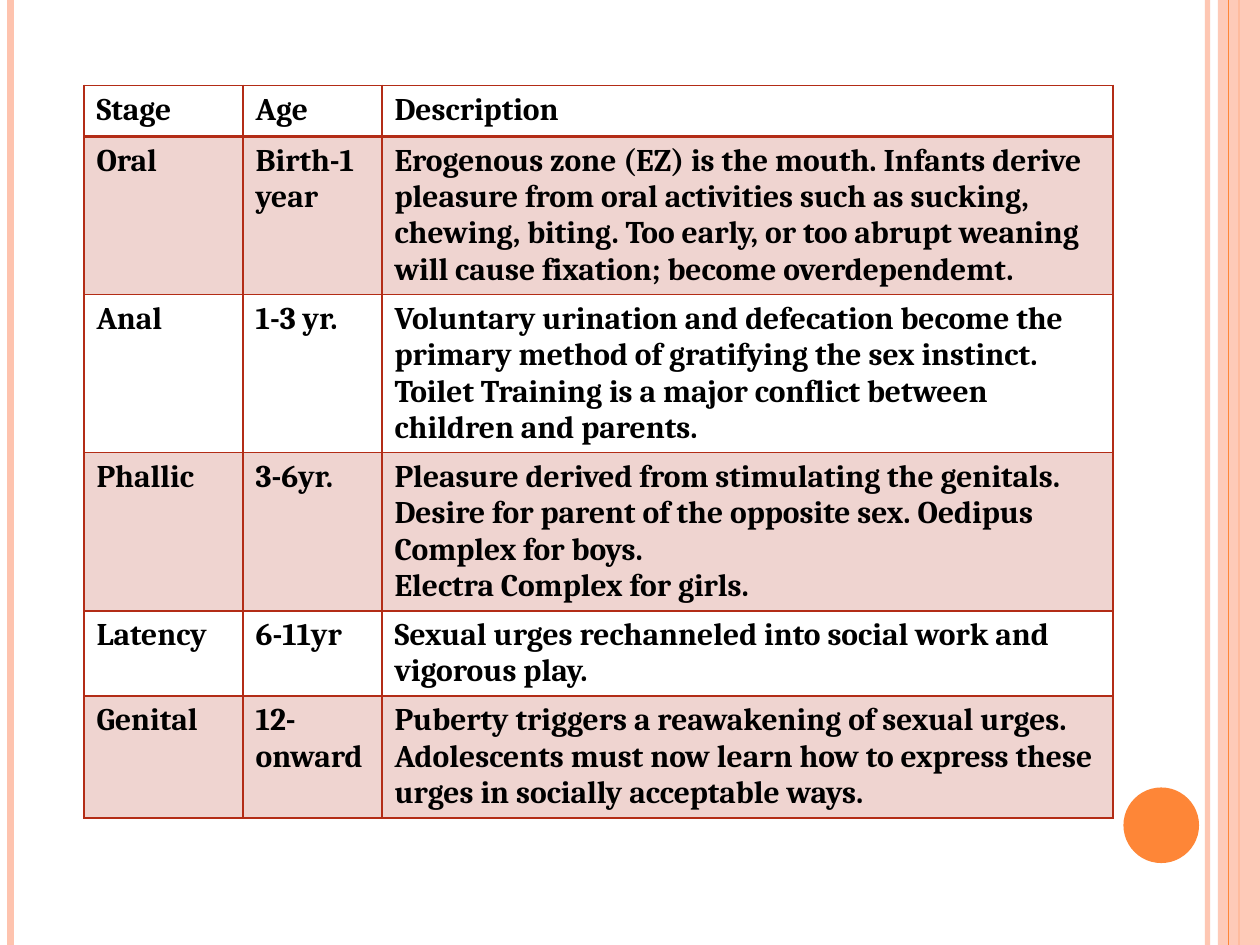
"""Build a slide with a table of the psychosexual stages."""
from pptx import Presentation
from pptx.dml.color import RGBColor
from pptx.enum.shapes import MSO_CONNECTOR, MSO_SHAPE
from pptx.oxml.ns import qn
from pptx.util import Pt
from lxml.etree import SubElement

WIDTH, HEIGHT = 720, 540
ORANGE, PEACH, RED, BLACK = "FE8637", "FEC3AE", "B32C16", "000000"
COLUMN_WIDTHS = [90.9, 79.4, 417.7]
ROW_HEIGHT = 29.2
STAGES = [
    ("Stage", "Age", "Description"),
    ("Oral", "Birth-1 year",
     "Erogenous zone (EZ) is the mouth. Infants derive pleasure from oral "
     "activities such as sucking, chewing, biting. Too early, or too abrupt "
     "weaning will cause fixation; become overdependemt."),
    ("Anal", "1-3 yr.",
     "Voluntary urination and defecation become the primary method of "
     "gratifying the sex instinct. Toilet Training is a major conflict "
     "between children and parents."),
    ("Phallic", "3-6yr.",
     "Pleasure derived from stimulating the genitals. Desire for parent of "
     "the opposite sex. Oedipus Complex for boys.\n"
     "Electra Complex for girls."),
    ("Latency", "6-11yr",
     "Sexual urges rechanneled into social work and vigorous play."),
    ("Genital", "12-onward",
     "Puberty triggers a reawakening of sexual urges. Adolescents must now "
     "learn how to express these urges in socially acceptable ways."),
]


def set_color(target, color, opacity=100):
    """Make a fill solid in a hex colour with an opacity in percent."""
    target.solid()
    target.fore_color.rgb = RGBColor.from_string(color)
    if opacity < 100:
        choice = target._xPr.find(qn("a:solidFill"))[0]
        SubElement(choice, qn("a:alpha"), val=str(opacity * 1000))


def add_vertical_line(slide, x, color, width, opacity=100):
    """Draw a line over the full slide height."""
    line = slide.shapes.add_connector(
        MSO_CONNECTOR.STRAIGHT, Pt(x), Pt(0), Pt(x), Pt(HEIGHT))
    set_color(line.line.fill, color, opacity)
    line.line.width = Pt(width)
    SubElement(line._element.spPr, qn("a:effectLst"))


def add_plain_shape(slide, kind, box, color, opacity=100):
    """Add a filled shape without outline or shadow."""
    shape = slide.shapes.add_shape(kind, *map(Pt, box))
    shape.shadow.inherit = False
    set_color(shape.fill, color, opacity)
    shape.line.fill.background()


def set_borders(cell, color, widths):
    """Set the left, right, top and bottom borders of a cell."""
    properties = cell._tc.get_or_add_tcPr()
    for side, width in zip("LRTB", widths):
        border = SubElement(properties, qn(f"a:ln{side}"), w=str(Pt(width)))
        fill = SubElement(border, qn("a:solidFill"))
        SubElement(fill, qn("a:srgbClr"), val=color)


def fill_cell(cell, text, row):
    """Write and style one cell according to its row."""
    cell.text = text
    for paragraph in cell.text_frame.paragraphs:
        font = paragraph.font
        font.name, font.size, font.bold = "Cambria", Pt(18), True
        set_color(font.fill, BLACK)
    set_borders(cell, RED, (1, 1, 2 if row == 1 else 1, 2 if row == 0 else 1))
    if row % 2:
        set_color(cell.fill, RED, 20)
    else:
        cell.fill.background()


def add_stage_table(slide, left, top):
    """Add the table of stages."""
    table = slide.shapes.add_table(
        len(STAGES), len(COLUMN_WIDTHS), Pt(left), Pt(top),
        Pt(sum(COLUMN_WIDTHS)), Pt(ROW_HEIGHT * len(STAGES))).table
    table.horz_banding = False
    table.first_row = False
    for column, width in zip(table.columns, COLUMN_WIDTHS):
        column.width = Pt(width)
    for row, texts in enumerate(STAGES):
        table.rows[row].height = Pt(ROW_HEIGHT)
        for column, text in enumerate(texts):
            fill_cell(table.cell(row, column), text, row)


def main():
    """Build and save the slide."""
    presentation = Presentation()
    presentation.slide_width, presentation.slide_height = Pt(WIDTH), Pt(HEIGHT)
    slide = presentation.slides.add_slide(presentation.slide_layouts[6])
    add_vertical_line(slide, 690, PEACH, 3, 93)
    add_vertical_line(slide, 6, PEACH, 4.5)
    add_vertical_line(slide, 708, ORANGE, 1.5)
    add_plain_shape(slide, MSO_SHAPE.RECTANGLE, (696, 0, 24, HEIGHT), PEACH, 87)
    add_vertical_line(slide, 702, ORANGE, 0.75)
    add_plain_shape(slide, MSO_SHAPE.OVAL, (642, 450, 43.2, 43.2), ORANGE)
    add_stage_table(slide, 48, 48.8)
    presentation.save("out.pptx")


if __name__ == "__main__":
    main()
